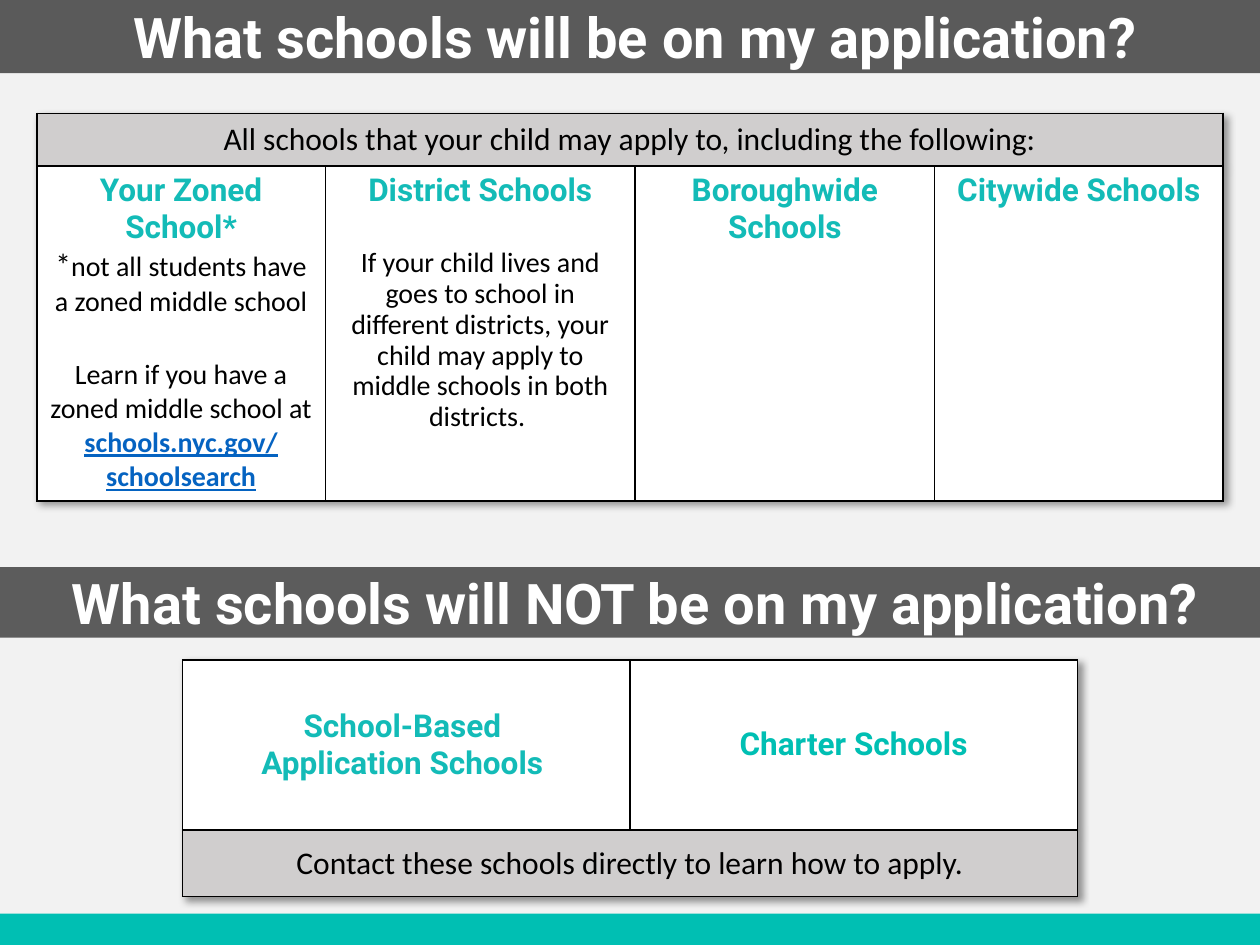
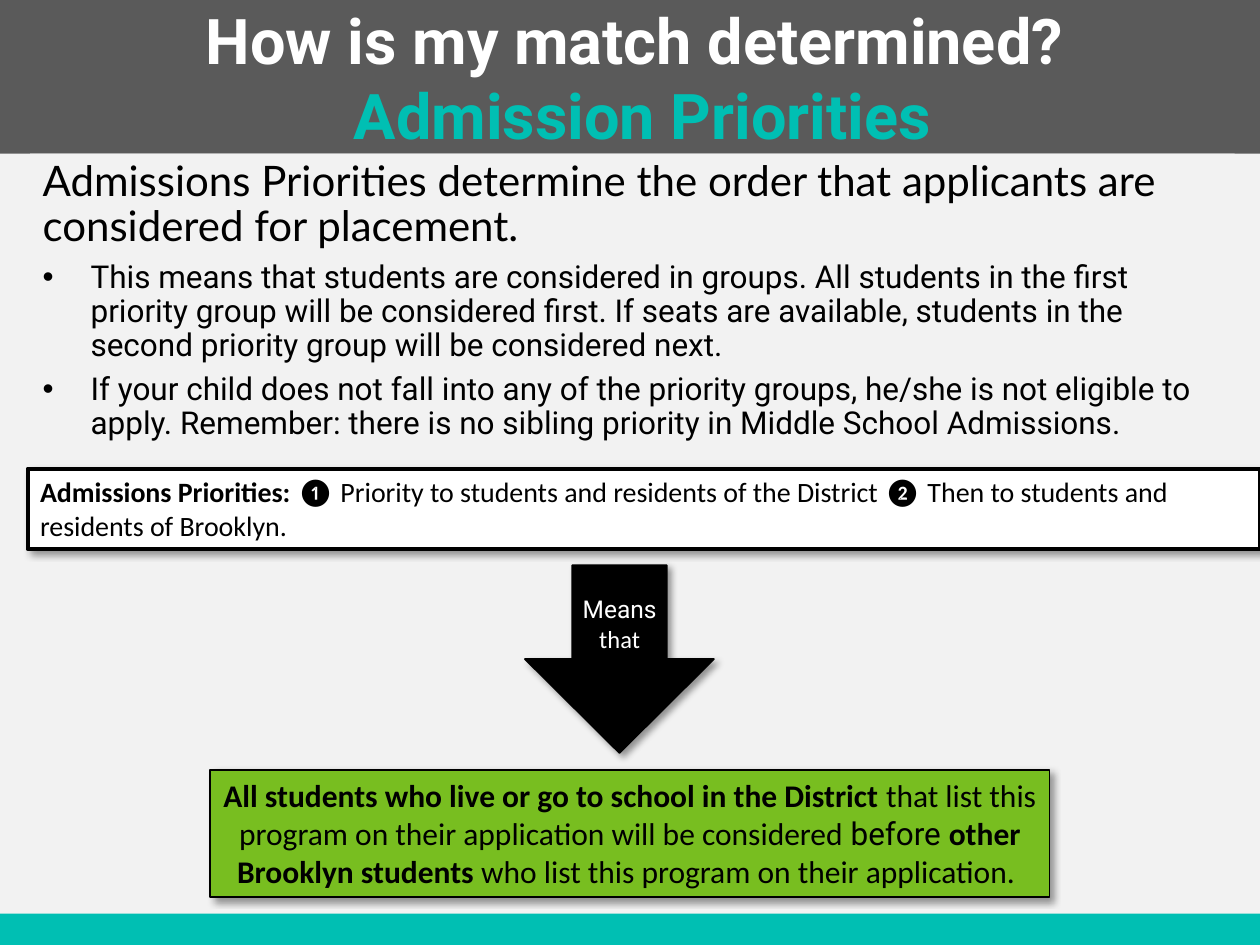
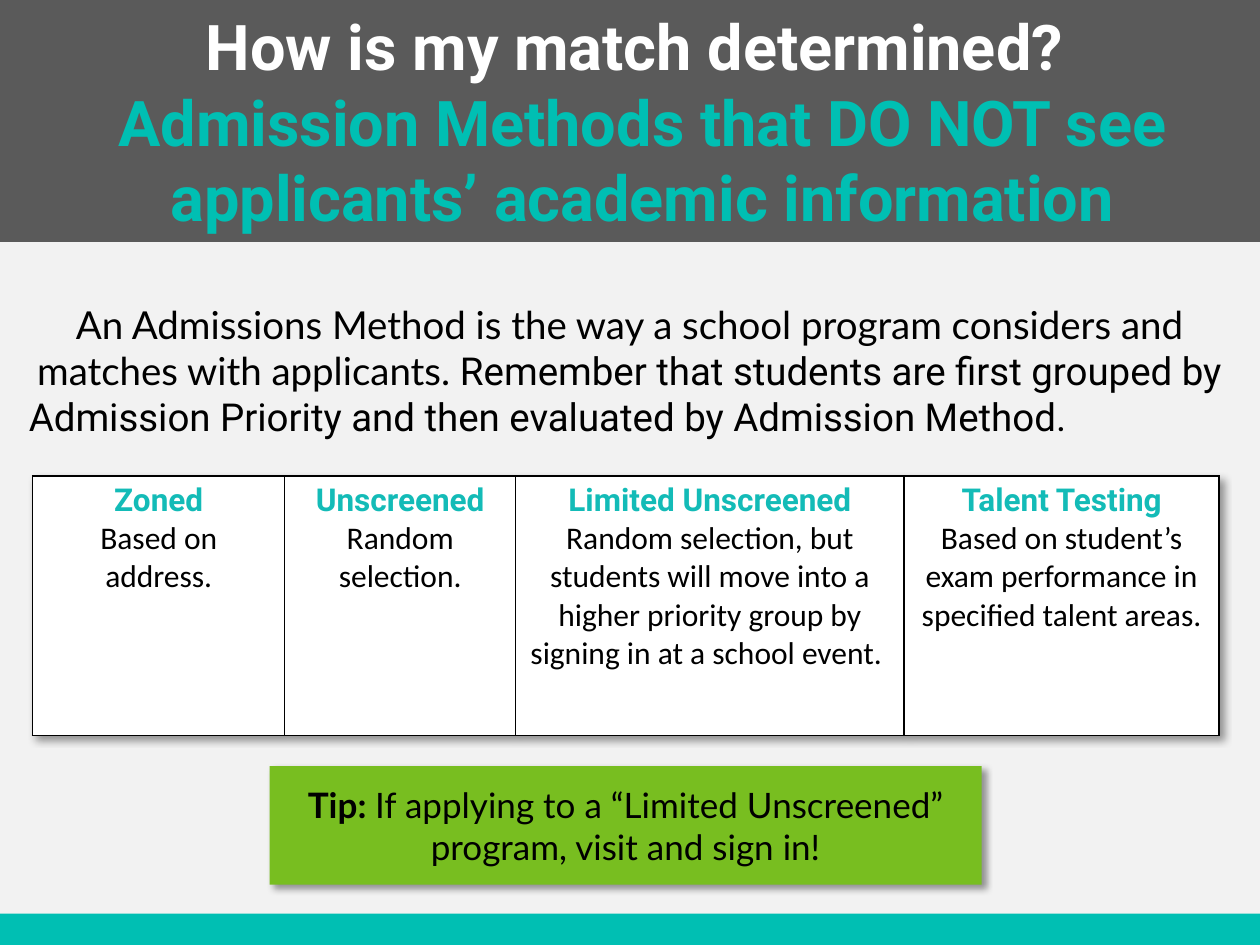
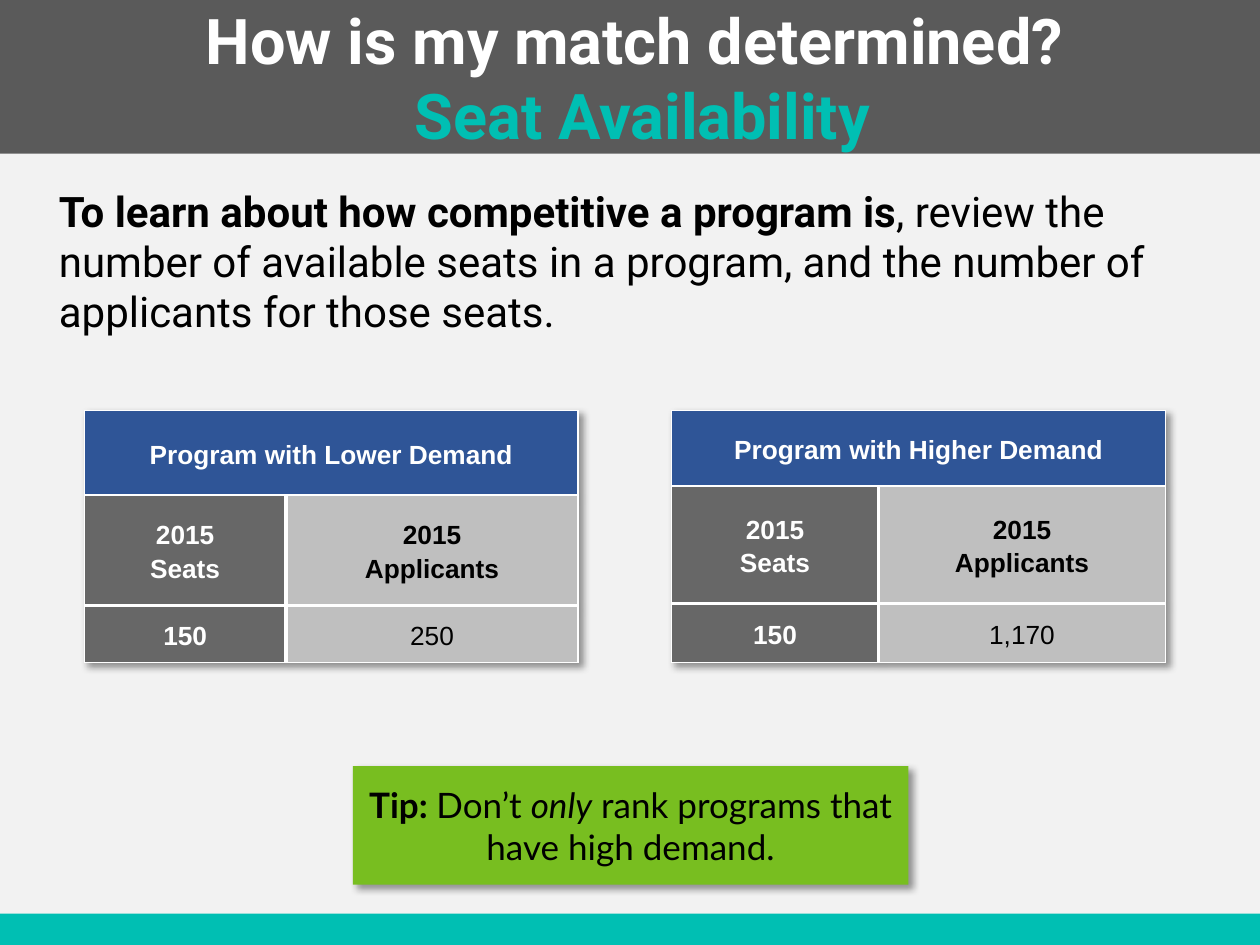
from lxml import etree
from pptx import Presentation
from pptx.dml.color import RGBColor
from pptx.enum.shapes import MSO_SHAPE
from pptx.enum.text import MSO_ANCHOR, MSO_AUTO_SIZE, PP_ALIGN
from pptx.oxml import parse_xml
from pptx.oxml.ns import nsdecls, qn
from pptx.util import Pt

RECT, RIGHT_ARROW = MSO_SHAPE.RECTANGLE, MSO_SHAPE.RIGHT_ARROW
TOP, MIDDLE = MSO_ANCHOR.TOP, MSO_ANCHOR.MIDDLE
LEFT, CENTER = PP_ALIGN.LEFT, PP_ALIGN.CENTER
NO_AUTOSIZE = MSO_AUTO_SIZE.NONE

BLACK = RGBColor(0x00, 0x00, 0x00)
WHITE = RGBColor(0xFF, 0xFF, 0xFF)
PAGE = RGBColor(0xF2, 0xF2, 0xF2)
BAND = RGBColor(0x40, 0x40, 0x40)
BAND_SOLID = RGBColor(0x5C, 0x5C, 0x5C)
TEAL = RGBColor(0x00, 0xBF, 0xB3)
HEADING_TEAL = RGBColor(0x13, 0xBB, 0xB7)
GREEN = RGBColor(0x78, 0xBE, 0x20)
BLUE = RGBColor(0x2F, 0x55, 0x97)
LINK_BLUE = RGBColor(0x05, 0x63, 0xC1)
NOTE_GRAY = RGBColor(0xD0, 0xCE, 0xCE)
SEATS_GRAY = RGBColor(0x67, 0x67, 0x67)
APPLICANTS_GRAY = RGBColor(0xBF, 0xBF, 0xBF)

PAGE_WIDTH, PAGE_HEIGHT, FOOTER_HEIGHT = 720, 540, 18
BAND_MARGINS = (21.6, 3.6, 7.2, 3.6)
TEXT_MARGINS = (7.2, 3.6, 7.2, 3.6)
BAND_OPACITY = 85000


def font(name, size, color=BLACK, bold=False, **extra):
    return {"name": name, "size": Pt(size), "color": color, "bold": bold, **extra}


def para(*runs, align=CENTER, **layout):
    return runs, {"alignment": align, **layout}


# Text styles
HEADING = font("Roboto", 18, HEADING_TEAL, True)
BODY = font("Calibri", 18)
BODY_BOLD = font("Calibri", 18, bold=True)
SMALL = font("Calibri", 16)
SMALL_BOLD = font("Calibri", 16, bold=True)
LINK = font("Calibri", 16, LINK_BLUE, True, underline=True)
TIP = font("Lato", 20)
TIP_BOLD = font("Lato", 20, bold=True)
TIP_ITALIC = font("Lato", 20, italic=True)
POINT = font("Roboto", 18)
BAND_32 = font("Roboto", 32, WHITE, True)
BAND_36 = font("Roboto", 36, WHITE, True)
BAND_SUBTITLE = font("Roboto", 36, TEAL, True)

# Slide 1: schools on and off the application
ON_TITLE = [para(("What schools will be on my application? ", BAND_32))]
OFF_TITLE = [para(("What schools will NOT be on my application? ", BAND_32))]
AFTER_GAP = {"space_before": Pt(22)}
ON_SCHOOLS = [
    [([para(("All schools that your child may apply to, including the following:", BODY))],
      NOTE_GRAY, MIDDLE)],
    [([para(("Your Zoned School*", HEADING)),
       para(("*", BODY), ("not all students have a zoned middle school", SMALL)),
       para(("Learn if you have a zoned middle school at ", SMALL),
            ("schools.nyc.gov/\nschoolsearch", LINK), **AFTER_GAP)], WHITE, TOP),
     ([para(("District Schools", HEADING)),
       para(("If your child lives and goes to school in different districts, your child "
             "may apply to middle schools in both districts. ", SMALL),
            line_spacing=0.9, **AFTER_GAP)], WHITE, TOP),
     ([para(("Boroughwide Schools", HEADING))], WHITE, TOP),
     ([para(("Citywide Schools", HEADING))], WHITE, TOP)],
]
OFF_SCHOOLS = [
    [([para(("School-Based \nApplication Schools ", HEADING))], WHITE, MIDDLE),
     ([para(("Charter Schools", {**HEADING, "color": TEAL}))], WHITE, MIDDLE)],
    [([para(("Contact these schools directly to learn how to apply.", BODY))],
      NOTE_GRAY, MIDDLE)],
]


# Slides 2 to 4 share the first title line
def match_title(subtitle):
    return [para(("How is my match determined? ", BAND_36)),
            para((subtitle, BAND_SUBTITLE))]


# Slide 2: admission priorities
SPACED = {"align": LEFT, "line_spacing": 0.9, "space_after": Pt(6)}
PRIORITY_POINTS = [
    para(("Admissions Priorities determine the order that applicants are considered "
          "for placement.", font("Lato", 24)), **SPACED),
    para(("This means that students are considered in groups. All students in the first "
          "priority group will be considered first. If seats are available, students in "
          "the second priority group will be considered next.", POINT), bullet=27.4, **SPACED),
    para(("If your child does not fall into any of the priority groups, he/she is not "
          "eligible to apply. Remember: there is no sibling priority in Middle School "
          "Admissions.", POINT), bullet=27.4, **SPACED),
]
PRIORITY_RULE = [para(
    ("Admissions Priorities: ", SMALL_BOLD),
    ("❶ Priority to students and residents of the District ❷ Then to students and "
     "residents of Brooklyn.", SMALL), align=LEFT)]
MEANS_THAT = [para(("Means", font("Roboto", 14, WHITE)), (" that", font("Calibri", 14, WHITE)))]
PRIORITY_MEANING = [para(
    ("All students who live or go to school in the District ", BODY_BOLD),
    ("that list this program on their application will be considered ", BODY),
    ("before ", POINT),
    ("other Brooklyn students ", BODY_BOLD),
    ("who list this program on their application. ", BODY))]

# Slide 3: admission methods
METHOD_INTRO = [
    para(("An Admissions Method is the way a school program considers and matches with "
          "applicants. ", font("Lato", 22)),
         ("Remember that students are first grouped by", font("Roboto", 22))),
    para(("Admission Priority and then evaluated by Admission Method.", font("Roboto", 22)),
         align=LEFT, space_after=Pt(6)),
]
METHODS = [
    ("Zoned", "Based on address."),
    ("Unscreened", "Random selection."),
    ("Limited Unscreened", "Random selection, but students will move into a higher "
     "priority group by signing in at a school event. "),
    ("Talent Testing", "Based on student’s exam performance in specified talent areas."),
]
SIGN_IN_TIP = [para(
    ("Tip: ", TIP_BOLD),
    ("If applying to a “Limited Unscreened” program, visit and sign in!", TIP),
    space_before=Pt(7))]

# Slide 4: seat availability
SEATS_INTRO = [para(
    ("To learn about how competitive a program is", font("Roboto", 24, bold=True)),
    (", review the number of available seats in a program, and the number of applicants "
     "for those seats.", font("Roboto", 24)), align=LEFT, space_after=Pt(6))]
DEMAND_PROGRAMS = [
    {"title": "Program with Lower Demand", "seats": "150", "applicants": "250",
     "left": 48.2, "columns": (115.2, 167), "rows": (48.4, 63.2, 32.4),
     "margin": 2.9, "title_space": 0},
    {"title": "Program with Higher Demand", "seats": "150", "applicants": "1,170",
     "left": 383.8, "columns": (118.1, 164.2), "rows": (43.2, 67, 33.8),
     "margin": 2.2, "title_space": 6},
]
DEMAND_TOP = 234.5
DEMAND_HEAVY_EDGES = {(1, 0): "RB", (1, 1): "LB", (2, 0): "RT", (2, 1): "LT"}
RANK_TIP = [para(("Tip: ", TIP_BOLD), ("Don’t ", TIP), ("only", TIP_ITALIC),
                 (" rank programs that have high demand.", TIP), space_before=Pt(7))]


def soft_shadow():
    return parse_xml(
        f'<a:effectLst {nsdecls("a")}><a:outerShdw blurRad="{Pt(4)}" dist="{Pt(3)}" '
        'dir="2700000" algn="tl" rotWithShape="0"><a:srgbClr val="000000">'
        '<a:alpha val="40000"/></a:srgbClr></a:outerShdw></a:effectLst>')


def add_bullet(paragraph, indent):
    properties = paragraph._p.get_or_add_pPr()
    properties.set("marL", str(Pt(indent)))
    properties.set("indent", str(-Pt(indent)))
    etree.SubElement(properties, qn("a:buFont")).set("typeface", "Arial")
    etree.SubElement(properties, qn("a:buChar")).set("char", "•")


def write_run(paragraph, text, style):
    for index, line in enumerate(text.split("\n")):
        if index:
            paragraph.add_line_break()
        run = paragraph.add_run()
        run.text = line
        for key, value in style.items():
            if key == "color":
                run.font.color.rgb = value
            else:
                setattr(run.font, key, value)


def set_margins(target, margins):
    for side, value in zip(("left", "top", "right", "bottom"), margins):
        setattr(target, f"margin_{side}", Pt(value))


def write_text(frame, paragraphs):
    for index, (runs, layout) in enumerate(paragraphs):
        paragraph = frame.add_paragraph() if index else frame.paragraphs[0]
        for key, value in layout.items():
            if key != "bullet":
                setattr(paragraph, key, value)
        if "bullet" in layout:
            add_bullet(paragraph, layout["bullet"])
        for text, style in runs:
            write_run(paragraph, text, style)


def fill_frame(shape, paragraphs, anchor, margins):
    frame = shape.text_frame
    for key, value in {"word_wrap": True, "auto_size": NO_AUTOSIZE,
                       "vertical_anchor": anchor}.items():
        setattr(frame, key, value)
    set_margins(frame, margins)
    write_text(frame, paragraphs)


def add_box(slide, place, fill, paragraphs=(), preset=RECT, outline=None, shadow=False,
            anchor=TOP, margins=TEXT_MARGINS):
    """Add a filled shape; outline is a black line width in points."""
    box = slide.shapes.add_shape(preset, *map(Pt, place))
    box.shadow.inherit = False
    box.fill.solid()
    box.fill.fore_color.rgb = fill
    if outline:
        box.line.color.rgb = BLACK
        box.line.width = Pt(outline)
    else:
        box.line.fill.background()
    if shadow:
        properties = box._element.spPr
        properties.replace(properties.find(qn("a:effectLst")), soft_shadow())
    if paragraphs:
        fill_frame(box, paragraphs, anchor, margins)
    return box


def add_label(slide, place, paragraphs):
    label = slide.shapes.add_textbox(*map(Pt, place))
    fill_frame(label, paragraphs, TOP, TEXT_MARGINS)


def add_tip(slide, left, width, paragraphs):
    add_box(slide, (left, 437.8, width, 67.7), GREEN, paragraphs, shadow=True, anchor=MIDDLE)


def set_borders(cell, color, heavy_sides):
    properties = cell._tc.get_or_add_tcPr()
    for index, side in enumerate("LRTB"):
        width = Pt(2.25 if side in heavy_sides else 1)
        properties.insert(index, parse_xml(
            f'<a:ln{side} {nsdecls("a")} w="{width}"><a:solidFill><a:srgbClr val="{color}"/>'
            f'</a:solidFill></a:ln{side}>'))


def add_grid(slide, left, top, columns, rows, content, border=BLACK, heavy_edges=None,
             margins=TEXT_MARGINS):
    """Add a table; a content row with a single cell spans all columns."""
    holder = slide.shapes.add_table(len(rows), len(columns), Pt(left), Pt(top),
                                    Pt(sum(columns)), Pt(sum(rows)))
    table = holder.table
    table.first_row = table.horz_banding = False
    table._tbl.tblPr.insert(0, soft_shadow())
    for column, width in zip(table.columns, columns):
        column.width = Pt(width)
    for r, (height, cells) in enumerate(zip(rows, content)):
        table.rows[r].height = Pt(height)
        if len(cells) == 1:
            table.cell(r, 0).merge(table.cell(r, len(columns) - 1))
        for c in range(len(columns)):
            set_borders(table.cell(r, c), border, (heavy_edges or {}).get((r, c), ""))
        for c, (paragraphs, fill, anchor) in enumerate(cells):
            cell = table.cell(r, c)
            cell.fill.solid()
            cell.fill.fore_color.rgb = fill
            cell.vertical_anchor = anchor
            set_margins(cell, margins)
            write_text(cell.text_frame, paragraphs)


def add_page(deck, title_lines, band_height):
    """Add a slide with the title band and the footer band."""
    slide = deck.slides.add_slide(deck.slide_layouts[5])
    title = slide.shapes.title
    for key, value in zip(("left", "top", "width", "height"),
                          (0, 0, PAGE_WIDTH, band_height)):
        setattr(title, key, Pt(value))
    title.fill.solid()
    title.fill.fore_color.rgb = BAND
    band_color = title._element.spPr.find(qn("a:solidFill"))[0]
    etree.SubElement(band_color, qn("a:alpha")).set("val", str(BAND_OPACITY))
    fill_frame(title, title_lines, MIDDLE, BAND_MARGINS)
    add_box(slide, (0, PAGE_HEIGHT - FOOTER_HEIGHT, PAGE_WIDTH, FOOTER_HEIGHT), TEAL)
    return slide


def build_schools(deck):
    slide = add_page(deck, ON_TITLE, 41.8)
    add_grid(slide, 21, 64.8, (165, 177, 171, 165), (30.2, 191), ON_SCHOOLS)
    add_box(slide, (0, 324, PAGE_WIDTH, 40.4), BAND_SOLID, OFF_TITLE,
            anchor=MIDDLE, margins=BAND_MARGINS)
    add_grid(slide, 104.4, 377, (255.6, 255.6), (97.2, 38.2), OFF_SCHOOLS)


def build_priorities(deck):
    slide = add_page(deck, match_title("Admission Priorities"), 87.8)
    add_box(slide, (17.3, 87.8, 688.3, 170), PAGE, PRIORITY_POINTS)
    add_box(slide, (15.8, 267.8, 704.2, 46), WHITE, PRIORITY_RULE, outline=2.25, shadow=True)
    arrow = add_box(slide, (300.3, 322.6, 107.3, 108), BLACK, preset=RIGHT_ARROW,
                    outline=1, shadow=True)
    arrow.rotation = 90
    add_label(slide, (321, 336.2, 66.2, 41), MEANS_THAT)
    add_box(slide, (120.2, 440, 479.5, 72.7), GREEN, PRIORITY_MEANING, outline=1, shadow=True)


def build_methods(deck):
    slide = add_page(deck, match_title(
        "Admission Methods that DO NOT see applicants’ academic information"), 138.2)
    add_box(slide, (9.4, 168.5, 700.6, 87.1), PAGE, METHOD_INTRO)
    add_tip(slide, 154.1, 406.8, SIGN_IN_TIP)
    methods = [([para((name, HEADING)), para((basis, BODY))], WHITE, TOP)
               for name, basis in METHODS]
    add_grid(slide, 18.7, 272, (144, 132, 222, 180), (148.3,), [methods])


def demand_cell(lines, fill, color, bold=True, space=0):
    style = font("Arial", 15, color, bold)
    paragraphs = [para((line, style), line_spacing=1.15, space_before=Pt(space),
                       space_after=Pt(space)) for line in lines]
    return paragraphs, fill, MIDDLE


def build_seats(deck):
    slide = add_page(deck, match_title("Seat Availability"), 87.8)
    add_label(slide, (26.6, 102.2, 666.7, 94.3), SEATS_INTRO)
    for program in DEMAND_PROGRAMS:
        content = [
            [demand_cell([program["title"]], BLUE, WHITE, space=program["title_space"])],
            [demand_cell(["2015", "Seats"], SEATS_GRAY, WHITE),
             demand_cell(["2015", "Applicants"], APPLICANTS_GRAY, BLACK)],
            [demand_cell([program["seats"]], SEATS_GRAY, WHITE),
             demand_cell([program["applicants"]], APPLICANTS_GRAY, BLACK, bold=False)],
        ]
        add_grid(slide, program["left"], DEMAND_TOP, program["columns"], program["rows"],
                 content, WHITE, DEMAND_HEAVY_EDGES,
                 (program["margin"], 0, program["margin"], 0))
    add_tip(slide, 201.6, 317.5, RANK_TIP)


def main():
    deck = Presentation()
    deck.slide_width, deck.slide_height = Pt(PAGE_WIDTH), Pt(PAGE_HEIGHT)
    background = deck.slide_master.background.fill
    background.solid()
    background.fore_color.rgb = PAGE
    for build in (build_schools, build_priorities, build_methods, build_seats):
        build(deck)
    deck.save("out.pptx")


if __name__ == "__main__":
    main()
